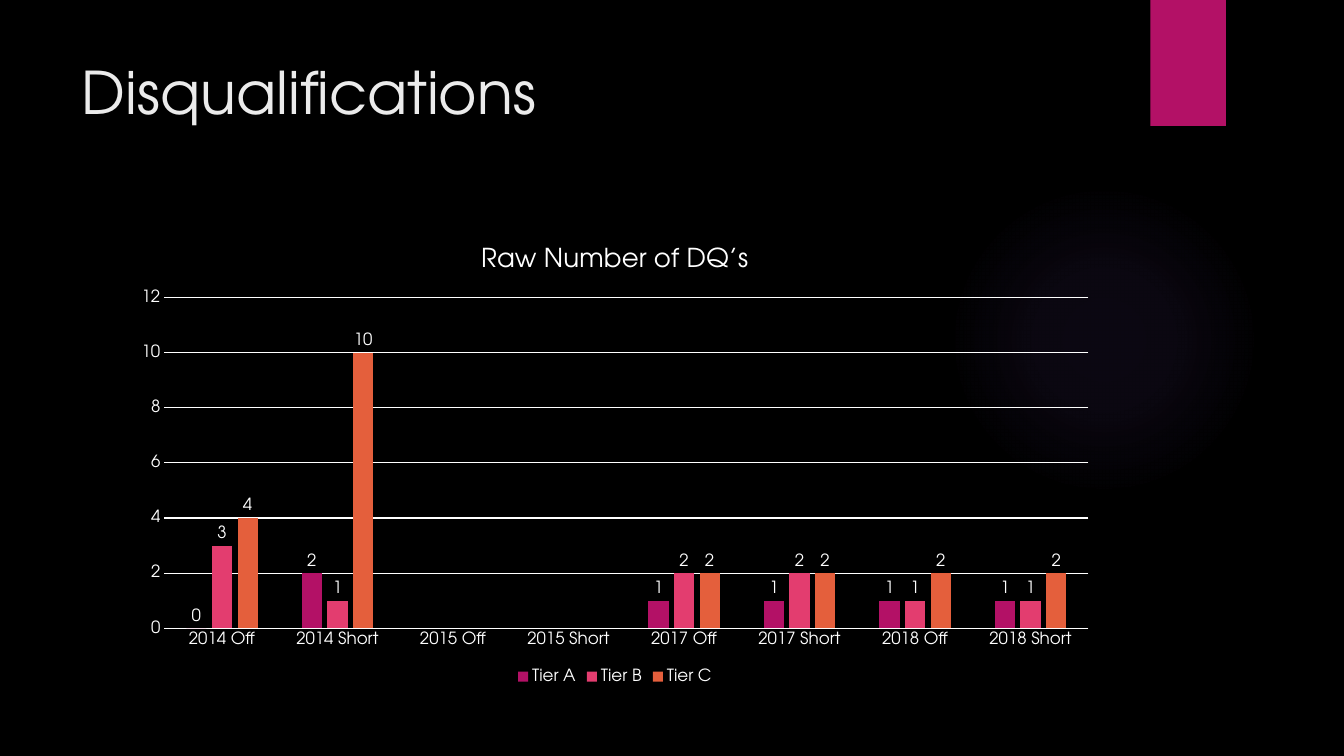
from lxml import etree
from pptx import Presentation
from pptx.chart.data import CategoryChartData
from pptx.dml.color import RGBColor
from pptx.enum.chart import XL_CHART_TYPE, XL_LABEL_POSITION, XL_LEGEND_POSITION, XL_TICK_MARK
from pptx.enum.shapes import MSO_SHAPE
from pptx.enum.text import MSO_ANCHOR, PP_ALIGN
from pptx.util import Inches, Pt

FONT = "TeX Gyre Adventor"
WHITE = "FFFFFF"
A_NS = "http://schemas.openxmlformats.org/drawingml/2006/main"


def rgb(value):
    return RGBColor.from_string(value)


def set_font(font, size, color=WHITE):
    for name, value in {"name": FONT, "size": Pt(size), "bold": False}.items():
        setattr(font, name, value)
    font.color.rgb = rgb(color)


prs = Presentation()
prs.slide_width, prs.slide_height = Inches(13.33), Inches(7.5)
s = prs.slides.add_slide(prs.slide_layouts[5])
s.background.fill.solid()
s.background.fill.fore_color.rgb = rgb("000000")

decorations = {}
for name, kind, box, color in [
    ("glow", MSO_SHAPE.OVAL, (9.41, 1.83, 3.08, 3.08), "9B6BF2"),
    ("tab", MSO_SHAPE.RECTANGLE, (11.41, 0, 0.75, 1.25), "B31166"),
]:
    sp = s.shapes.add_shape(kind, *map(Inches, box))
    sp.shadow.inherit = False
    sp.fill.solid()
    sp.fill.fore_color.rgb = rgb(color)
    sp.line.fill.background()
    decorations[name] = sp

stops = "".join(
    f'<a:gs pos="{pos * 1000}"><a:srgbClr val="9B6BF2"><a:alpha val="{alpha * 1000}"/></a:srgbClr></a:gs>'
    for pos, alpha in [(0, 7), (36, 6), (69, 0), (100, 0)]
)
gradient = etree.fromstring(
    f'<a:gradFill xmlns:a="{A_NS}" rotWithShape="1"><a:gsLst>{stops}</a:gsLst><a:path path="circle">'
    '<a:fillToRect l="50000" t="50000" r="50000" b="50000"/></a:path></a:gradFill>'
)
spPr = decorations["glow"].element.spPr
spPr.replace(spPr.find(f"{{{A_NS}}}solidFill"), gradient)

title = s.shapes.title
title.left, title.top, title.width, title.height = map(Inches, (0.71, 0.5, 10.29, 1.53))
tf = title.text_frame
tf.text = "Disqualifications"
tf.word_wrap = True
tf.vertical_anchor = MSO_ANCHOR.TOP
p = tf.paragraphs[0]
p.alignment = PP_ALIGN.LEFT
set_font(p.runs[0].font, 42, "EBEBEB")

tiers = [
    ("Tier A", "B31166", (0, 2, None, None, 1, 1, 1, 1)),
    ("Tier B", "E33D6F", (3, 1, None, None, 2, 2, 1, 1)),
    ("Tier C", "E45F3C", (4, 10, None, None, 2, 2, 2, 2)),
]
data = CategoryChartData()
data.categories = [f"{year} {event}" for year in (2014, 2015, 2017, 2018) for event in ("Off", "Short")]
for name, color, values in tiers:
    data.add_series(name, values)

chart = s.shapes.add_chart(
    XL_CHART_TYPE.COLUMN_CLUSTERED, *map(Inches, (1.21, 2.24, 9.78, 4.59)), data
).chart
set_font(chart.font, 10)
chart.has_title = True
chart.chart_title.include_in_layout = False
chart.chart_title.text_frame.text = "Raw Number of DQ’s"
set_font(chart.chart_title.text_frame.paragraphs[0].runs[0].font, 18.6)

chart.has_legend = True
chart.legend.position = XL_LEGEND_POSITION.BOTTOM
chart.legend.include_in_layout = False
set_font(chart.legend.font, 12)

value_axis, category_axis = chart.value_axis, chart.category_axis
for axis in (value_axis, category_axis):
    axis.major_tick_mark = axis.minor_tick_mark = XL_TICK_MARK.NONE
    set_font(axis.tick_labels.font, 12)
value_axis.minimum_scale, value_axis.maximum_scale, value_axis.major_unit = 0, 12, 2
value_axis.format.line.fill.background()
value_axis.has_major_gridlines = True
for line in (category_axis.format.line, value_axis.major_gridlines.format.line):
    line.color.rgb = rgb(WHITE)
    line.width = Pt(0.75)

plot = chart.plots[0]
plot.gap_width, plot.overlap, plot.vary_by_categories = 219, -27, False
for series, (name, color, values) in zip(plot.series, tiers):
    series.invert_if_negative = False
    series.format.fill.solid()
    series.format.fill.fore_color.rgb = rgb(color)
    labels = series.data_labels
    labels.show_value = True
    labels.position = XL_LABEL_POSITION.OUTSIDE_END
    set_font(labels.font, 12)

prs.save("out.pptx")
